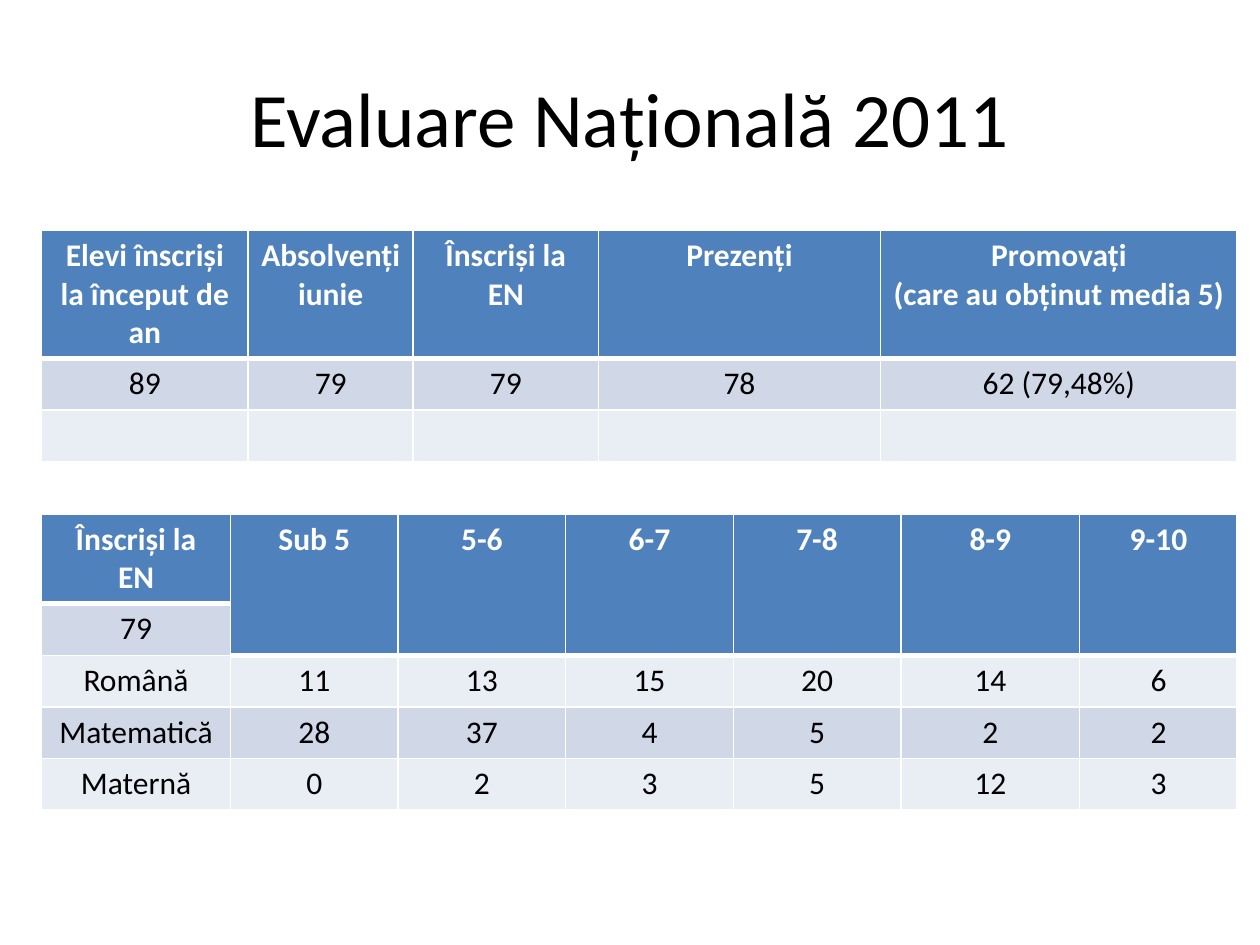
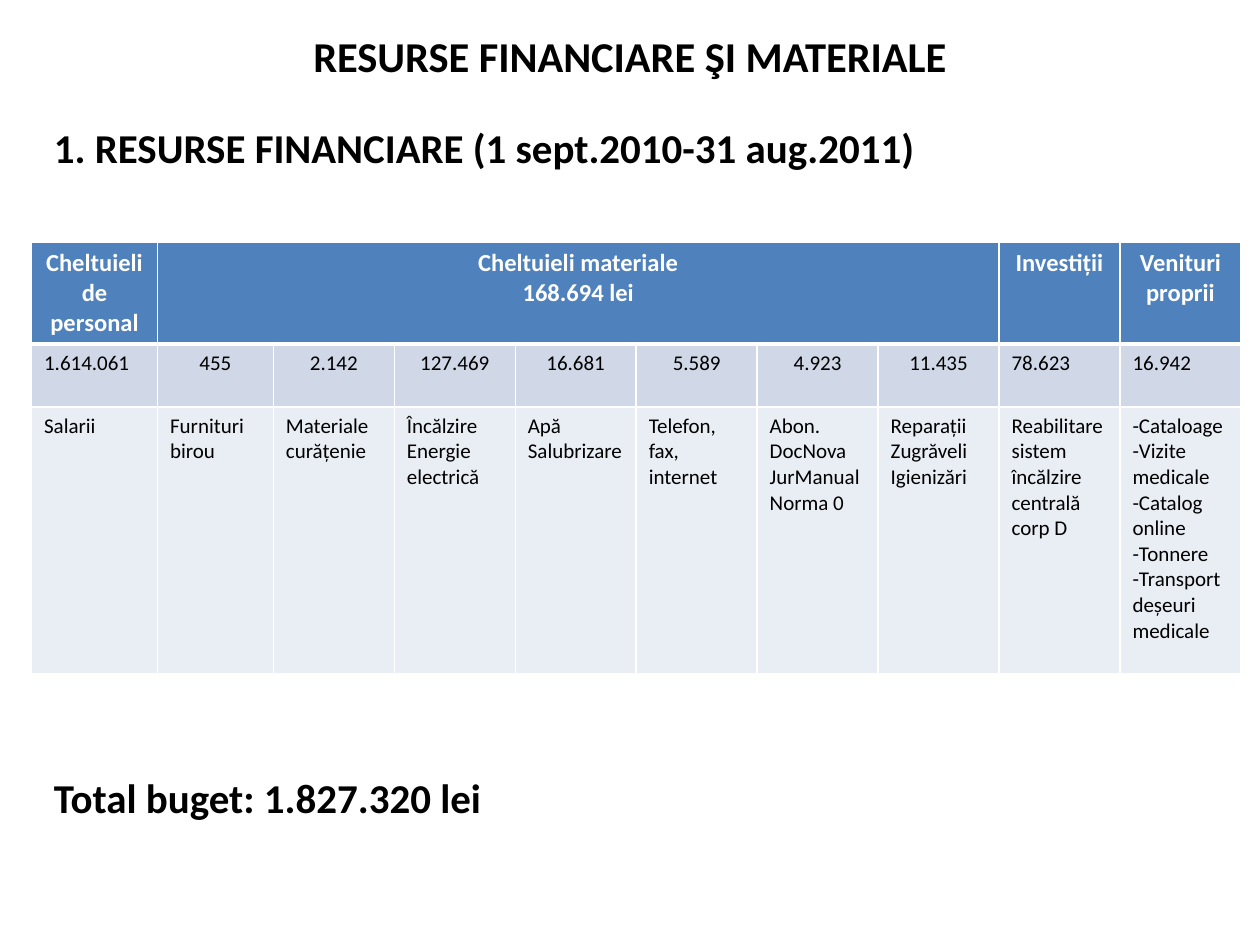
from lxml.etree import SubElement
from pptx import Presentation
from pptx.dml.color import RGBColor
from pptx.enum.text import MSO_ANCHOR as Anchor, PP_ALIGN as Align
from pptx.oxml.ns import qn
from pptx.util import Inches, Pt

BLACK = RGBColor(0x00, 0x00, 0x00)
WHITE = RGBColor(0xFF, 0xFF, 0xFF)
HEADER_BLUE = RGBColor(0x4F, 0x81, 0xBD)
BAND_DARK = RGBColor(0xD0, 0xD8, 0xE8)
BAND_LIGHT = RGBColor(0xE9, 0xED, 0xF4)

FONT = "Calibri"
TITLE_ONLY = 5

ATTENDANCE = [
    ["Elevi înscriși la început de an", "Absolvenți iunie", "Înscriși la EN",
     "Prezenți", "Promovați\n(care au obținut media 5)"],
    ["89", "79", "79", "78", "62 (79,48%)"],
    [""] * 5,
]
GRADES = [
    ["Înscriși la EN", "Sub 5", "5-6", "6-7", "7-8", "8-9", "9-10"],
    ["79"] + [""] * 6,
    ["Română", "11", "13", "15", "20", "14", "6"],
    ["Matematică", "28", "37", "4", "5", "2", "2"],
    ["Maternă", "0", "2", "3", "5", "12", "3"],
]
BUDGET = [
    ["Cheltuieli de personal", "Cheltuieli materiale\n168.694 lei"] + [""] * 6
    + ["Investiții", "Venituri proprii"],
    ["1.614.061", "455", "2.142", "127.469", "16.681", "5.589", "4.923",
     "11.435", "78.623", "16.942"],
    ["Salarii", "Furnituri birou", "Materiale curățenie",
     "Încălzire\nEnergie electrică", "Apă\nSalubrizare",
     "Telefon, fax, internet", "Abon. DocNova\nJurManual\nNorma 0",
     "Reparații\nZugrăveli\nIgienizări",
     "Reabilitare sistem încălzire centrală corp D",
     "-Cataloage\n-Vizite medicale\n-Catalog online\n-Tonnere\n"
     "-Transport deșeuri medicale"],
]


def write_text(frame, text, align, size, color=BLACK, bold=False):
    """Fill a text frame, one paragraph for each line of text."""
    frame.text = text
    style = {"name": FONT, "size": Pt(size), "bold": bold}
    for para in frame.paragraphs:
        para.alignment = align
        for name, value in style.items():
            setattr(para.font, name, value)
        para.font.color.rgb = color


def add_titled_page(deck, title, at, size, bold=False):
    page = deck.slides.add_slide(deck.slide_layouts[TITLE_ONLY])
    box = page.shapes.title
    box.left, box.top, box.width, box.height = map(Inches, at)
    box.text_frame.vertical_anchor = Anchor.MIDDLE
    write_text(box.text_frame, title, Align.CENTER, size, bold=bold)
    return page


def add_heading(page, text, top):
    box = page.shapes.add_textbox(Inches(0.33), Inches(top), Inches(9), Inches(0.5))
    box.text_frame.word_wrap = True
    box.text_frame.vertical_anchor = Anchor.MIDDLE
    write_text(box.text_frame, text, Align.LEFT, 23.4, bold=True)


def set_borders(cell, widths):
    """Draw white lines; widths maps a side (L, R, T, B) to points."""
    properties = cell._tc.get_or_add_tcPr()
    for side, width in widths.items():
        line = SubElement(properties, qn(f"a:ln{side}"), w=str(Pt(width)))
        fill = SubElement(line, qn("a:solidFill"))
        SubElement(fill, qn("a:srgbClr"), val=str(WHITE))


def add_grid(page, left, top, widths, heights, rows, merges=(),
             header_size=18, body_size=18, is_left=lambda row, col: False):
    """Add a banded table; the first row and cells merged into it are headers."""
    table = page.shapes.add_table(
        len(rows), len(widths), Inches(left), Inches(top),
        Inches(sum(widths)), Inches(sum(heights))).table
    for column, width in zip(table.columns, widths):
        column.width = Inches(width)
    for row, height in zip(table.rows, heights):
        row.height = Inches(height)
    for first, last in merges:
        table.cell(*first).merge(table.cell(*last))

    for r, texts in enumerate(rows):
        for c, text in enumerate(texts):
            cell = table.cell(r, c)
            header = r == 0 or cell.is_spanned
            borders = {"L": 1, "R": 1, "B": 3 if header else 1}
            set_borders(cell, borders)
            cell.fill.solid()
            if header:
                cell.fill.fore_color.rgb = HEADER_BLUE
                write_text(cell.text_frame, text, Align.CENTER, header_size, WHITE, True)
            else:
                cell.fill.fore_color.rgb = BAND_DARK if r % 2 else BAND_LIGHT
                align = Align.LEFT if is_left(r, c) else Align.CENTER
                write_text(cell.text_frame, text, align, body_size)


def add_exam_page(deck):
    page = add_titled_page(deck, "Evaluare Națională 2011", (0.5, 0.3, 9, 1.25), 44)
    add_grid(page, 0.33, 1.83, [1.64, 1.31, 1.47, 2.24, 2.83],
             [1] + [0.41] * 2, ATTENDANCE)
    add_grid(page, 0.33, 4.08, [1.5] + [1.33] * 4 + [1.42, 1.25],
             [0.71] + [0.41] * 4, GRADES,
             merges=[((0, c), (1, c)) for c in range(1, 7)])


def add_budget_page(deck):
    page = add_titled_page(deck, "RESURSE FINANCIARE ŞI MATERIALE",
                           (0.5, 0.19, 9, 0.5), 24.3, bold=True)
    add_grid(page, 0.25, 1.92, [1, 0.92] + [0.96] * 8, [0.81, 0.5, 2.12], BUDGET,
             merges=[((0, 1), (0, 7))], header_size=14, body_size=12,
             is_left=lambda row, col: row == 2 or not 1 <= col <= 7)
    add_heading(page, "1. RESURSE FINANCIARE (1 sept.2010-31 aug.2011)", 0.92)
    add_heading(page, "Total buget: 1.827.320 lei", 6.08)


def main():
    deck = Presentation()
    deck.slide_width, deck.slide_height = Inches(10), Inches(7.5)
    add_exam_page(deck)
    add_budget_page(deck)
    deck.save("out.pptx")


if __name__ == "__main__":
    main()
